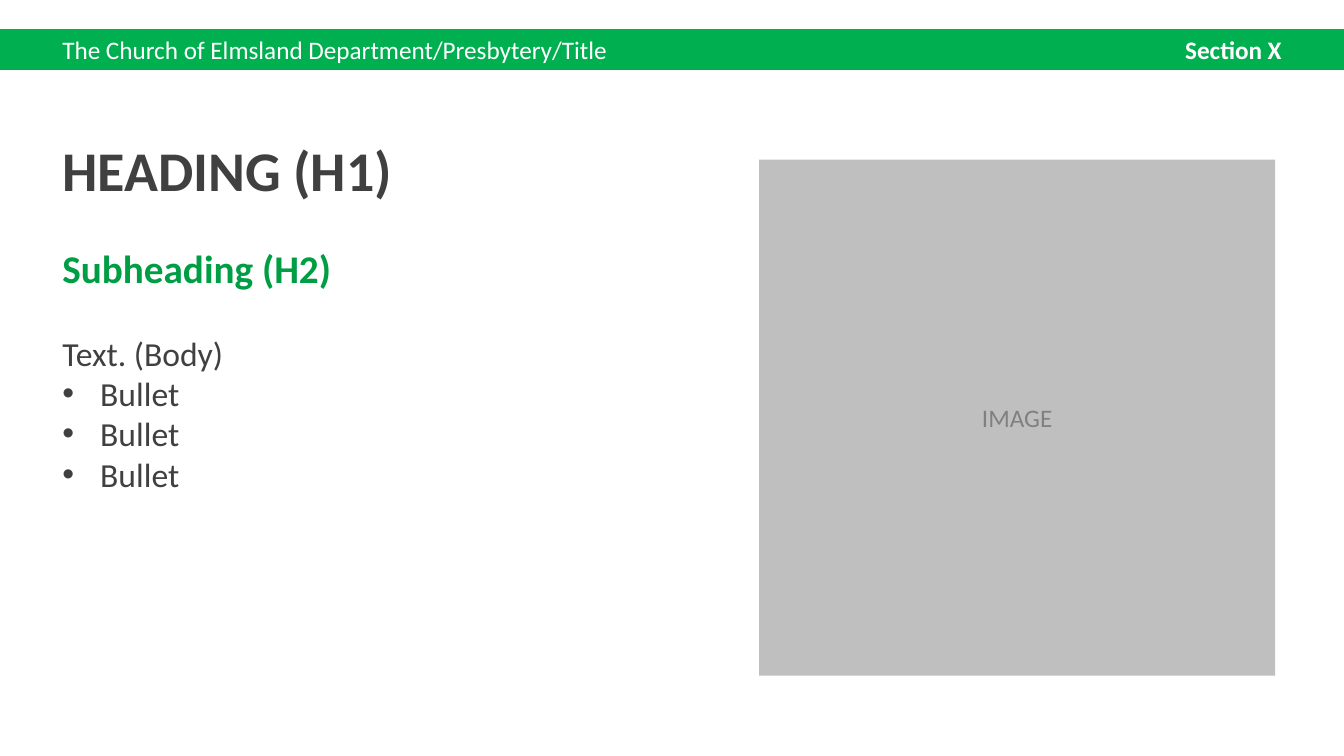
from dataclasses import dataclass

from lxml import etree
from pptx import Presentation
from pptx.dml.color import RGBColor
from pptx.enum import shapes, text
from pptx.oxml import ns
from pptx.util import Pt


@dataclass(frozen=True)
class Theme:
    font: str = "Calibri"
    band: str = "00B050"
    subheading: str = "009E44"
    ink: str = "404040"
    white: str = "FFFFFF"
    frame: str = "BFBFBF"
    label: str = "808080"
    h1: int = 40
    h2: int = 28
    body: int = 24
    small: int = 18


theme = Theme()
LEFT = text.PP_ALIGN.LEFT
MARGIN = 37.4
COLUMN_WIDTH = 674.6
BAND_TOP, BAND_HEIGHT = 20.9, 29.1
HEADER_WIDTH = 425.5
LIST_INDENT = 27


def write(shape, words, size, color, bold=False, align=LEFT, after=0, bullet=False, wrap=True):
    """Add one formatted paragraph, using the first one while it is empty."""
    frame = shape.text_frame
    frame.word_wrap = wrap
    frame.auto_size = text.MSO_AUTO_SIZE.NONE
    frame.vertical_anchor = text.MSO_ANCHOR.TOP
    paragraph = frame.paragraphs[-1]
    if paragraph.runs:
        paragraph = frame.add_paragraph()
    paragraph.alignment = align
    paragraph.line_spacing = 1.0
    paragraph.space_before = Pt(0)
    paragraph.space_after = Pt(after)
    properties = paragraph._p.get_or_add_pPr()
    indent = Pt(LIST_INDENT) if bullet else 0
    properties.set("marL", str(indent))
    properties.set("indent", str(-indent))
    if bullet:
        etree.SubElement(properties, ns.qn("a:buFont"), typeface="Arial")
        etree.SubElement(properties, ns.qn("a:buChar"), char="•")
    else:
        etree.SubElement(properties, ns.qn("a:buNone"))
    run = paragraph.add_run()
    run.text = words
    run.font.name = theme.font
    run.font.size = Pt(size)
    run.font.bold = bold
    run.font.color.rgb = RGBColor.from_string(color)


def add_block(slide, left, top, width, height, color):
    block = slide.shapes.add_shape(
        shapes.MSO_SHAPE.RECTANGLE, Pt(left), Pt(top), Pt(width), Pt(height))
    block.shadow.inherit = False
    block.fill.solid()
    block.fill.fore_color.rgb = RGBColor.from_string(color)
    block.line.fill.background()


presentation = Presentation()
presentation.slide_width, presentation.slide_height = Pt(960), Pt(540)
slide = presentation.slides.add_slide(presentation.slide_layouts[1])

# Header band and image area
add_block(slide, 0, BAND_TOP, 960, BAND_HEIGHT, theme.band)
add_block(slide, 542.3, 114.1, 368.6, 368.6, theme.frame)

labels = [
    ("The Church of Elmsland Department/Presbytery/Title", MARGIN, BAND_TOP, HEADER_WIDTH,
     dict(color=theme.white)),
    ("Section X", 960 - MARGIN - HEADER_WIDTH, BAND_TOP, HEADER_WIDTH,
     dict(color=theme.white, bold=True, align=text.PP_ALIGN.RIGHT)),
    ("IMAGE", 692.6, 283.8, 68,
     dict(color=theme.label, align=text.PP_ALIGN.CENTER, wrap=False)),
]
for words, left, top, width, style in labels:
    label = slide.shapes.add_textbox(Pt(left), Pt(top), Pt(width), Pt(BAND_HEIGHT))
    write(label, words, theme.small, **style)

# Heading and body
heading, body = slide.shapes.title, slide.placeholders[1]
for holder, top, height in ((heading, 92.9, 56), (body, 171, 215)):
    holder.left, holder.top = Pt(MARGIN), Pt(top)
    holder.width, holder.height = Pt(COLUMN_WIDTH), Pt(height)

write(heading, "HEADING (H1)", theme.h1, theme.ink, bold=True)
write(body, "Subheading (H2)", theme.h2, theme.subheading, bold=True, after=29.3)
write(body, "Text. (Body)", theme.body, theme.ink)
for _ in range(3):
    write(body, "Bullet", theme.body, theme.ink, bullet=True)

presentation.save("out.pptx")
